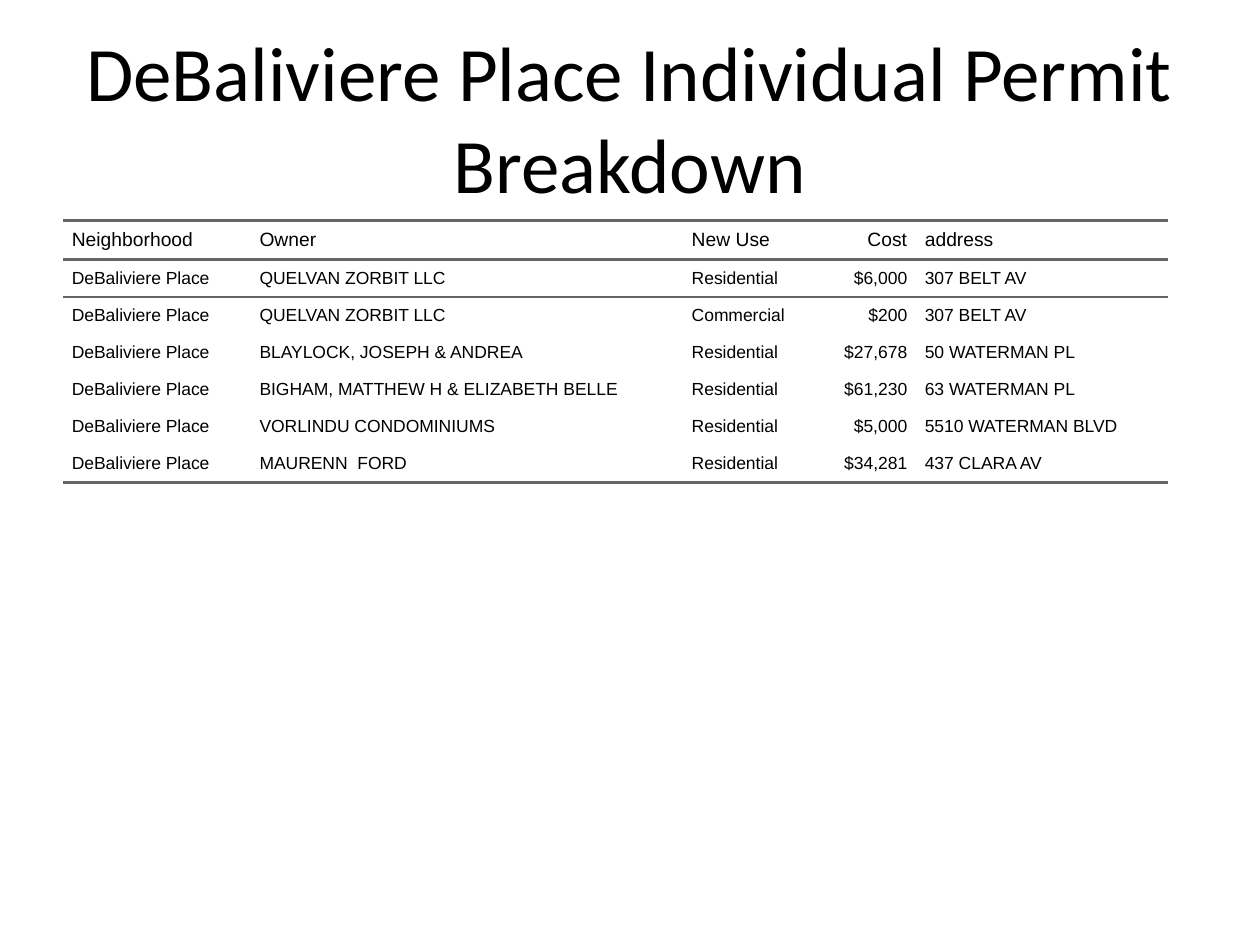
from lxml import etree
from pptx import Presentation
from pptx.dml.color import RGBColor
from pptx.enum.text import MSO_ANCHOR, PP_ALIGN
from pptx.oxml.ns import qn
from pptx.util import Inches, Pt

LEFT, CENTER, RIGHT = PP_ALIGN.LEFT, PP_ALIGN.CENTER, PP_ALIGN.RIGHT
MIDDLE = MSO_ANCHOR.MIDDLE

WIDTH, HEIGHT = Inches(10), Inches(7.5)
SIDE, CONTENT = 0.05, 0.9
COLORS = {"text": "000000", "rule": "666666"}
PLAIN_STYLE = "{2D5ABB26-0587-4C30-8999-92F81FD0307C}"
INDENT = Inches(0.07)
COLUMN_WIDTHS = [1.49, 3.43, 1.1, 0.75, 2]
ROW_HEIGHT = Inches(0.25)
COST_COLUMN = 3

CELL_FORMAT = {
    "margin_left": 0,
    "margin_right": 0,
    "margin_top": INDENT,
    "margin_bottom": INDENT,
    "vertical_anchor": MIDDLE,
}
PARA_FORMAT = {"space_before": Pt(5), "space_after": Pt(5)}

NEIGHBORHOOD = "DeBaliviere Place"
HEADINGS = ["Neighborhood", "Owner", "New Use", "Cost", "address"]
PERMITS = [
    ["QUELVAN ZORBIT LLC", "Residential", "$6,000", "307 BELT AV"],
    ["QUELVAN ZORBIT LLC", "Commercial", "$200", "307 BELT AV"],
    ["BLAYLOCK, JOSEPH & ANDREA", "Residential", "$27,678", "50 WATERMAN PL"],
    ["BIGHAM, MATTHEW H & ELIZABETH BELLE", "Residential", "$61,230", "63 WATERMAN PL"],
    ["VORLINDU CONDOMINIUMS", "Residential", "$5,000", "5510 WATERMAN BLVD"],
    ["MAURENN  FORD", "Residential", "$34,281", "437 CLARA AV"],
]


def apply_format(target, values):
    for name, value in values.items():
        setattr(target, name, value)


def place(shape, top, height):
    apply_format(shape, {
        "left": int(WIDTH * SIDE),
        "top": int(HEIGHT * top),
        "width": int(WIDTH * CONTENT),
        "height": int(HEIGHT * height),
    })


def write(para, text, font, size, align):
    para.alignment = align
    span = para.add_run()
    span.text = text
    apply_format(span.font, {"name": font, "size": Pt(size)})
    span.font.color.rgb = RGBColor.from_string(COLORS["text"])


def add_title(page, text):
    box = page.shapes.title
    place(box, 0.04, 1 / 6)
    frame = box.text_frame
    apply_format(frame, {"word_wrap": True, "vertical_anchor": MIDDLE})
    write(frame.paragraphs[0], text, "Calibri", 44, CENTER)


def add_rule(cell, side):
    line = etree.SubElement(cell._tc.get_or_add_tcPr(), qn(f"a:ln{side}"), w=str(Pt(1.5)))
    fill = etree.SubElement(line, qn("a:solidFill"))
    etree.SubElement(fill, qn("a:srgbClr"), val=COLORS["rule"])


def fill_cell(cell, text, size, align, sides):
    apply_format(cell, CELL_FORMAT)
    for side in sides:
        add_rule(cell, side)
    cell.fill.background()
    para = cell.text_frame.paragraphs[0]
    apply_format(para, PARA_FORMAT)
    write(para, text, "Arial", size, align)
    properties = para._p.get_or_add_pPr()
    for name, value in {"marL": INDENT, "marR": INDENT, "indent": 0}.items():
        properties.set(name, str(value))


def add_permit_table(page, rows):
    holder = page.shapes.add_table(len(rows), len(HEADINGS), 0, 0, WIDTH, HEIGHT)
    table = holder.table
    holder._element.find(".//" + qn("a:tableStyleId")).text = PLAIN_STYLE
    apply_format(table, {"first_row": False, "horz_banding": False})
    for column, width in zip(table.columns, COLUMN_WIDTHS):
        column.width = Inches(width)
    last = len(rows) - 1
    for index, values in enumerate(rows):
        table.rows[index].height = ROW_HEIGHT
        size = 10 if index else 11
        sides = {0: "TB", 1: "T", last: "B"}.get(index, "")
        for position, text in enumerate(values):
            align = RIGHT if position == COST_COLUMN else LEFT
            fill_cell(table.cell(index, position), text, size, align, sides)
    place(holder, 1.75 / 7.5, 0.66)


def main():
    deck = Presentation()
    apply_format(deck, {"slide_width": WIDTH, "slide_height": HEIGHT})
    page = deck.slides.add_slide(deck.slide_layouts[5])
    add_title(page, "DeBaliviere Place Individual Permit Breakdown")
    add_permit_table(page, [HEADINGS] + [[NEIGHBORHOOD] + permit for permit in PERMITS])
    deck.save("out.pptx")


if __name__ == "__main__":
    main()
